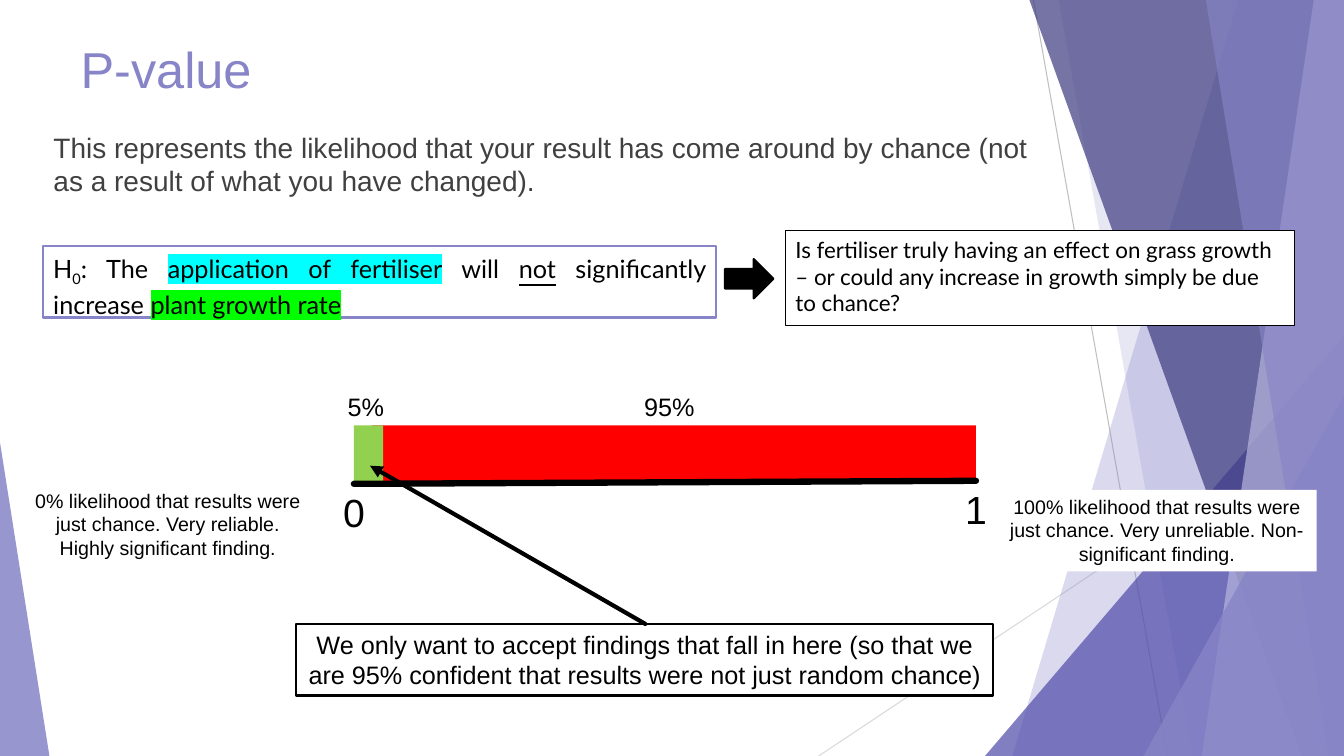
from lxml import etree
from pptx import Presentation
from pptx.dml import color
from pptx.enum import shapes, text
from pptx.oxml import ns
from pptx.util import Pt

PX = 9144  # 100 px to the inch
WIDTH, HEIGHT = 1333, 750
LILAC, BLACK, WHITE = "8784C7", "000000", "FFFFFF"
LEFT, CENTER, JUSTIFY = (text.PP_ALIGN.LEFT, text.PP_ALIGN.CENTER,
                         text.PP_ALIGN.JUSTIFY)


def rgb(value):
    return color.RGBColor.from_string(value)


def px(*lengths):
    return [length * PX for length in lengths]


def child(parent, tag, **attributes):
    return etree.SubElement(parent, ns.qn(tag), attributes)


class SlideBuilder:
    def __init__(self, presentation, font="Arial", ink=BLACK):
        self.slide = presentation.slides.add_slide(presentation.slide_layouts[1])
        self.shapes = self.slide.shapes
        self.font, self.ink = font, ink

    def paint(self, shape, fill, line=None, weight=1.5, opacity=100):
        shape.shadow.inherit = False
        shape.fill.solid()
        shape.fill.fore_color.rgb = rgb(fill)
        if opacity < 100:
            solid = shape._element.spPr.find(ns.qn("a:solidFill"))
            child(solid[0], "a:alpha", val=str(opacity * 1000))
        if line:
            shape.line.color.rgb = rgb(line)
            shape.line.width = Pt(weight)
        else:
            shape.line.fill.background()
        return shape

    def preset(self, kind, box, fill, adjust=None, **style):
        shape = self.shapes.add_shape(kind, *px(*box))
        if adjust is not None:
            shape.adjustments[0] = adjust
        return self.paint(shape, fill, **style)

    def rectangle(self, box, fill, **style):
        return self.preset(shapes.MSO_SHAPE.RECTANGLE, box, fill, **style)

    def band(self, top_x, bottom_x, fill, opacity):
        """A panel from a slanted left edge to the right edge of the slide."""
        builder = self.shapes.build_freeform(top_x, 0, scale=PX)
        builder.add_line_segments(
            [(WIDTH, 0), (WIDTH, HEIGHT), (bottom_x, HEIGHT)], close=True)
        self.paint(builder.convert_to_shape(), fill, opacity=opacity)

    def line(self, start, end, ink, weight, arrow=False):
        connector = self.shapes.add_connector(
            shapes.MSO_CONNECTOR.STRAIGHT, *px(*start, *end))
        connector.line.color.rgb = rgb(ink)
        connector.line.width = Pt(weight)
        outline = connector._element.spPr.find(ns.qn("a:ln"))
        outline.set("cap", "rnd")
        if arrow:
            child(outline, "a:tailEnd", type="triangle")
        child(connector._element.spPr, "a:effectLst")

    def add_runs(self, shape, runs, size, align=LEFT, font=None, ink=None,
                 wrap=True, fit=text.MSO_AUTO_SIZE.SHAPE_TO_FIT_TEXT):
        """Each run is (words, style); style may be sub, underline or a highlight."""
        frame = shape.text_frame
        frame.word_wrap = wrap
        frame.auto_size = fit
        frame.vertical_anchor = text.MSO_ANCHOR.TOP
        paragraph = frame.paragraphs[0]
        paragraph.alignment = align
        for words, style in runs:
            run = paragraph.add_run()
            run.text = words
            run.font.size = Pt(size)
            run.font.name = font or self.font
            run.font.color.rgb = rgb(ink or self.ink)
            properties = run._r.get_or_add_rPr()
            if style == "sub":
                properties.set("baseline", "-25000")
            elif style == "underline":
                run.font.underline = True
            elif style:
                highlight = etree.Element(ns.qn("a:highlight"))
                child(highlight, "a:srgbClr", val=style)
                properties.find(ns.qn("a:solidFill")).addnext(highlight)
        return paragraph

    def label(self, box, words, size, align=LEFT, wrap=True):
        self.add_runs(self.shapes.add_textbox(*px(*box)), [(words, None)], size,
                      align, wrap=wrap)

    def placeholder(self, index, box, words, size, ink):
        shape = self.slide.placeholders[index]
        shape.left, shape.top, shape.width, shape.height = px(*box)
        self.shapes._spTree.append(shape._element)  # in front of the backdrop
        return self.add_runs(shape, [(words, None)], size, ink=ink,
                             fit=text.MSO_AUTO_SIZE.NONE)


def draw_backdrop(page):
    triangle = shapes.MSO_SHAPE.ISOSCELES_TRIANGLE
    page.line((1025, 0), (1158, 750), "BFBFBF", 0.75)
    page.line((1333, 403), (812, 750), "D9D9D9", 0.75)
    page.band(1228, 1004, LILAC, 30)
    page.band(1050, 1183, LILAC, 20)
    page.preset(triangle, (977, 333, 356, 417), "514DAA", adjust=1, opacity=72)
    page.band(1021, 1291, "3D3A7F", 70)
    page.band(1303, 1192, "B7B5DD", 70)
    page.band(1196, 1318, LILAC, 65)
    page.preset(triangle, (1134, 393, 199, 357), LILAC, adjust=1, opacity=80)
    page.preset(triangle, (0, 439, 49, 311), LILAC, adjust=0, opacity=85)


def draw_heading(page):
    page.placeholder(0, (70, 33, 1178, 104), "P-value", 36, LILAC)
    paragraph = page.placeholder(
        1, (43, 124, 1020, 82),
        "This represents the likelihood that your result has come around by "
        "chance (not as a result of what you have changed).", 20, "404040")
    paragraph.space_before = Pt(10)
    properties = paragraph._p.get_or_add_pPr()
    properties.set("marL", "0")
    properties.set("indent", "0")
    child(properties, "a:buNone")


def draw_scale(page):
    page.rectangle((369, 422, 599, 58), "FF0000")
    page.rectangle((351, 422, 29, 58), "92D050")
    page.label((330, 480, 42, 57), "0", 28, CENTER, wrap=False)
    page.label((947, 477, 42, 57), "1", 28, CENTER, wrap=False)
    page.line((351, 480), (968, 477), BLACK, 4.5)
    page.label((22, 480, 289, 81),
               "0% likelihood that results were just chance. Very reliable. "
               "Highly significant finding.", 14, CENTER)
    page.add_runs(page.rectangle((989, 486, 317, 81), WHITE),
                  [("100% likelihood that results were just chance. Very "
                    "unreliable. Non-significant finding.", None)], 14, CENTER)
    page.add_runs(page.rectangle((294, 619, 691, 71), WHITE, line=BLACK),
                  [("We only want to accept findings that fall in here (so that "
                    "we are 95% confident that results were not just random "
                    "chance)", None)], 18, CENTER)
    page.label((629, 383, 339, 40), "95%", 18)
    page.label((335, 383, 69, 40), "5%", 18)
    page.line((640, 619), (367, 462), BLACK, 3, arrow=True)


def draw_hypothesis(page):
    paragraph = page.add_runs(
        page.rectangle((43, 244, 667, 71), WHITE, line=LILAC),
        [("H", None), ("0", "sub"), (": The ", None),
         ("application of fertiliser", "00FFFF"), (" will ", None),
         ("not", "underline"), (" significantly increase ", None),
         ("plant growth rate", "00FF00")], 18, JUSTIFY, font="Lato")
    paragraph.line_spacing = 1.07
    paragraph.space_after = Pt(8)
    page.add_runs(
        page.rectangle((779, 229, 505, 94), WHITE, line=BLACK, weight=0.75),
        [("Is fertiliser truly having an effect on grass growth – or could "
          "any increase in growth simply be due to chance?", None)],
        16, font="Lato")
    page.preset(shapes.MSO_SHAPE.RIGHT_ARROW, (719, 257, 48, 39), BLACK, line=BLACK)


def main():
    presentation = Presentation()
    presentation.slide_width, presentation.slide_height = px(WIDTH, HEIGHT)
    page = SlideBuilder(presentation)
    draw_backdrop(page)
    draw_heading(page)
    draw_scale(page)
    draw_hypothesis(page)
    presentation.save("out.pptx")


if __name__ == "__main__":
    main()
